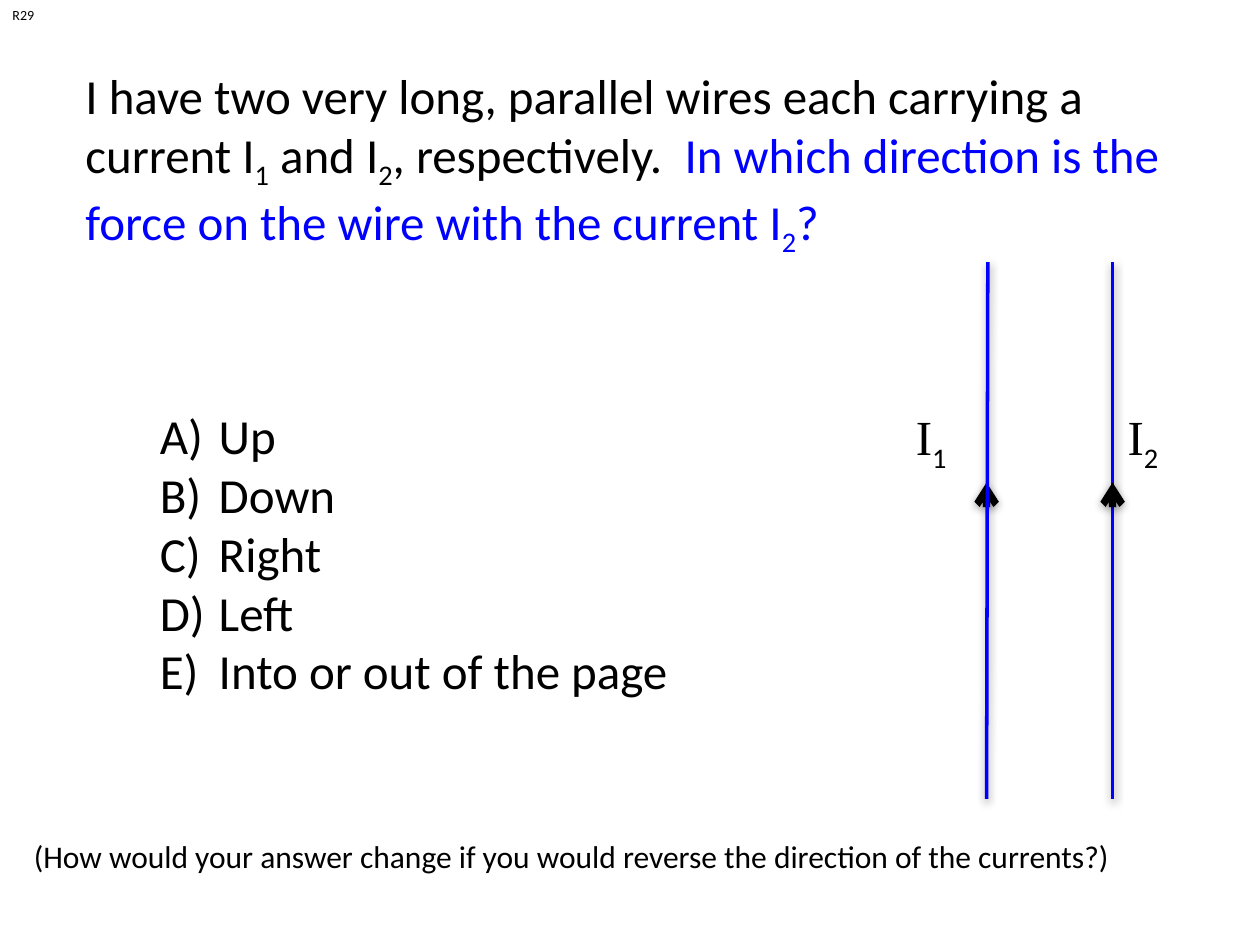
from lxml import etree
from pptx import Presentation
from pptx.dml.color import RGBColor
from pptx.enum.shapes import MSO_CONNECTOR
from pptx.enum.text import MSO_AUTO_SIZE
from pptx.oxml import parse_xml
from pptx.oxml.ns import nsdecls, qn
from pptx.util import Inches, Pt

COLORS = {"ink": "000000", "wire": "0000FF"}
SHADOW = (
    f'<a:effectLst {nsdecls("a")}>'
    '<a:outerShdw blurRad="63500" dist="20000" dir="5400000" rotWithShape="0">'
    f'<a:srgbClr val="{COLORS["ink"]}"><a:alpha val="38000"/></a:srgbClr>'
    "</a:outerShdw></a:effectLst>"
)

prs = Presentation()
prs.slide_width, prs.slide_height = Inches(10), Inches(7.5)
slide = prs.slides.add_slide(prs.slide_layouts[6])


def add_vertical_line(start, end, color, width, arrow=False):
    """Draw a shadowed line between two (x, y) points given in inches."""
    line = slide.shapes.add_connector(
        MSO_CONNECTOR.STRAIGHT, *(Inches(v) for v in (*start, *end)))
    line.line.color.rgb = RGBColor.from_string(COLORS[color])
    line.line.width = Pt(width)
    if arrow:
        etree.SubElement(line.line._ln, qn("a:tailEnd"), type="arrow")
    line._element.spPr.append(parse_xml(SHADOW))


def add_text(box, paragraphs, size, wrap=True, lettered=False):
    """Each paragraph is a list of (text, color, font, is_subscript) runs."""
    frame = slide.shapes.add_textbox(*(Inches(v) for v in box)).text_frame
    frame.word_wrap = wrap
    frame.auto_size = MSO_AUTO_SIZE.SHAPE_TO_FIT_TEXT
    for i, runs in enumerate(paragraphs):
        paragraph = frame.add_paragraph() if i else frame.paragraphs[0]
        if lettered:
            props = paragraph._p.get_or_add_pPr()
            props.set("marL", str(Inches(0.38)))
            props.set("indent", str(-Inches(0.38)))
            etree.SubElement(props, qn("a:buFont"), typeface="+mj-lt")
            etree.SubElement(props, qn("a:buAutoNum"), type="alphaUcParenR")
        for text, color, font, subscript in runs:
            run = paragraph.add_run()
            run.text = text
            run.font.size = Pt(size)
            run.font.name = font
            run.font.color.rgb = RGBColor.from_string(COLORS[color])
            if subscript:
                run.font._element.set("baseline", "-25000")


# The first wire runs over its arrowhead, the second runs under it
add_vertical_line((7.83, 4), (7.83, 3.83), "ink", 4, arrow=True)
for top_x, bottom_x in ((7.84, 7.83), (8.83, 8.83)):
    add_vertical_line((bottom_x, 6.34), (top_x, 2.08), "wire", 2)
add_vertical_line((8.83, 4), (8.83, 3.83), "ink", 4, arrow=True)

for left, number in ((7.17, "1"), (8.85, "2")):
    current = [("I", "ink", "Times New Roman", False),
               (number, "ink", "Calibri", True)]
    add_text((left, 3.18, 0.48, 0.57), [current], 28, wrap=False)

question = [
    ("I have two very long, parallel wires each carrying a current I", "ink", "Calibri", False),
    ("1", "ink", "Calibri", True),
    (" and I", "ink", "Calibri", False),
    ("2", "ink", "Calibri", True),
    (", respectively.  ", "ink", "Calibri", False),
    ("In which direction is the force on the wire with the current I", "wire", "Calibri", False),
    ("2", "wire", "Calibri", True),
    ("?", "wire", "Calibri", False),
]
add_text((0.58, 0.47, 9, 1.51), [question], 28)

follow_up = "(How would your answer change if you would reverse the direction of the currents?)"
add_text((0.17, 6.59, 9.58, 0.91), [[(follow_up, "ink", "Calibri", False)]], 18)

answers = [" Up", " Down", " Right", " Left", " Into or out of the page"]
add_text((1.17, 3.17, 4.55, 2.46),
         [[(answer, "ink", "Calibri", False)] for answer in answers],
         28, wrap=False, lettered=True)

add_text((0, 0, 0.38, 0.24), [[("R29", "ink", "Calibri", False)]], 8, wrap=False)

prs.save("out.pptx")
